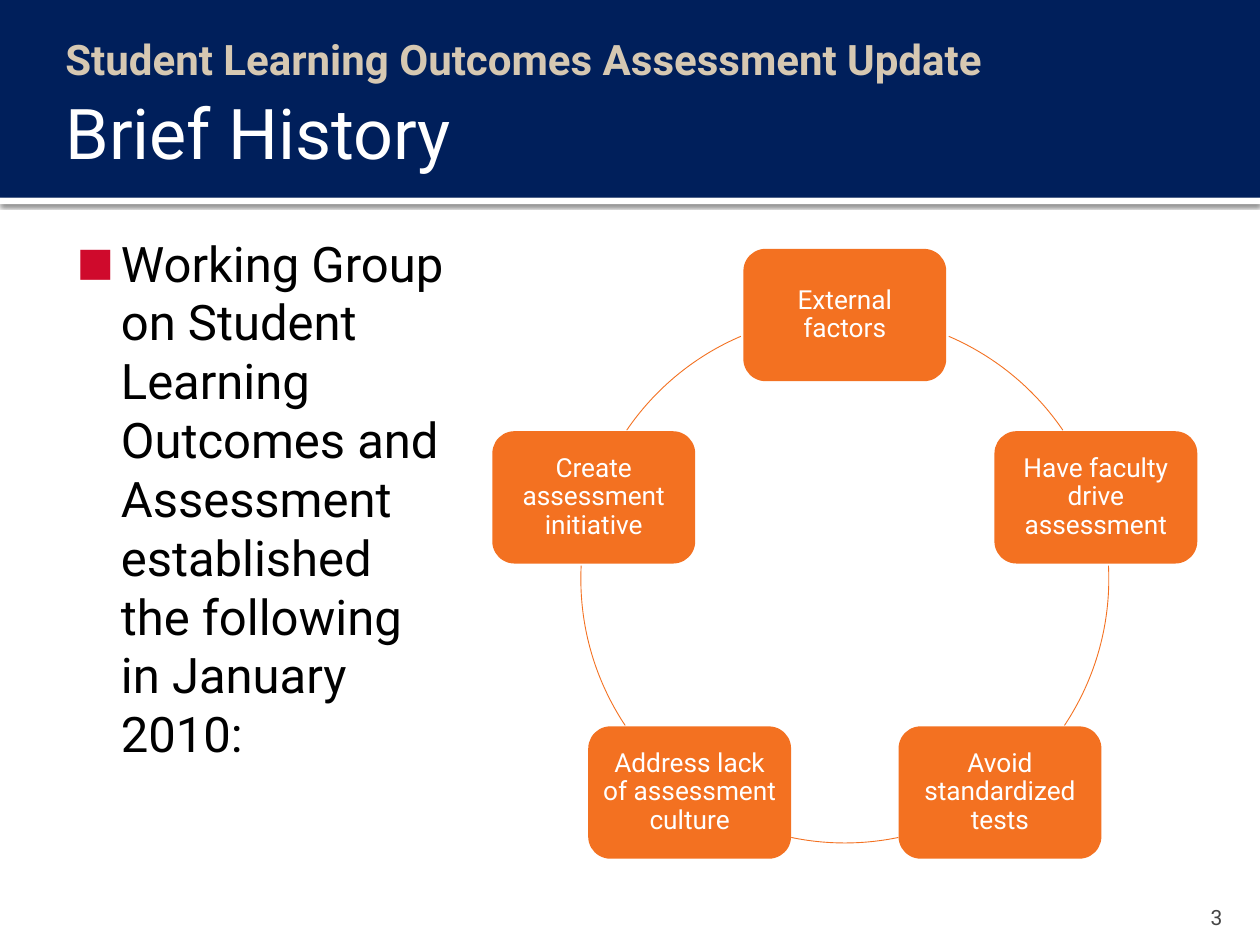
from collections import namedtuple
from math import cos, radians, sin

from lxml.etree import SubElement
from pptx import Presentation
from pptx.dml.color import RGBColor
from pptx.enum.shapes import MSO_SHAPE
from pptx.enum.text import MSO_ANCHOR, MSO_AUTO_SIZE, PP_ALIGN
from pptx.oxml.ns import qn
from pptx.util import Inches, Pt

WHITE = RGBColor(0xFF, 0xFF, 0xFF)
BLACK = RGBColor(0x00, 0x00, 0x00)
NAVY = RGBColor(0x00, 0x1F, 0x5B)
SAND = RGBColor(0xD6, 0xC8, 0xB2)
ORANGE = RGBColor(0xF3, 0x71, 0x21)
RED = RGBColor(0xCF, 0x0A, 0x2C)
GRAY = RGBColor(0x45, 0x45, 0x45)
FONT = "Roboto"

COLUMNS, ROWS = 100, 75
SLIDE_WIDTH, SLIDE_HEIGHT = Inches(10), Inches(7.5)
Box = namedtuple("Box", "left top width height")

STEPS = [
    "External factors",
    "Have faculty drive assessment",
    "Avoid standardized tests",
    "Address lack of assessment culture",
    "Create assessment initiative",
]
ARC_ANGLES = [(293.2, 325.7), (357.1, 33.7), (78.3, 101.7), (146.3, 182.9), (214.3, 246.8)]


def inside(box, left, top, width, height):
    return Box(box.left + left, box.top + top, width, height)


def to_lengths(box):
    column, row = SLIDE_WIDTH / COLUMNS, SLIDE_HEIGHT / ROWS
    return [int(value * unit) for value, unit in zip(box, (column, row, column, row))]


def add_plain_shape(slide, kind, box, fill=None):
    shape = slide.shapes.add_shape(kind, *to_lengths(box))
    shape.shadow.inherit = False
    if fill is not None:
        shape.fill.solid()
        shape.fill.fore_color.rgb = fill
        shape.line.fill.background()
    return shape


def write_text(shape, text, size, color, align=PP_ALIGN.LEFT, anchor=MSO_ANCHOR.TOP,
               margins=(0.06, 0.1, 0.1, 0.05), bold=False):
    frame = shape.text_frame
    frame.text = text
    frame.word_wrap = True
    frame.auto_size = MSO_AUTO_SIZE.NONE
    frame.vertical_anchor = anchor
    (frame.margin_left, frame.margin_top,
     frame.margin_right, frame.margin_bottom) = [Inches(margin) for margin in margins]
    paragraph = frame.paragraphs[0]
    paragraph.alignment = align
    font = paragraph.runs[0].font
    font.name, font.size, font.bold = FONT, Pt(size), bold
    font.color.rgb = color
    return paragraph


def add_text(slide, box, *args, **options):
    return write_text(slide.shapes.add_textbox(*to_lengths(box)), *args, **options)


def set_hanging_indent(paragraph, left, first_line):
    properties = paragraph._p.get_or_add_pPr()
    properties.set("marL", str(Inches(left)))
    properties.set("indent", str(Inches(first_line)))
    return properties


def add_bottom_shadow(shape):
    effects = shape.element.spPr.find(qn("a:effectLst"))
    shadow = SubElement(effects, qn("a:outerShdw"), blurRad=str(Pt(2.5)),
                        dist=str(Pt(0.8)), dir="5400000", rotWithShape="0")
    color = SubElement(shadow, qn("a:srgbClr"), val=str(BLACK))
    SubElement(color, qn("a:alpha"), val="60000")


def build_header(slide, box):
    strip = add_plain_shape(slide, MSO_SHAPE.RECTANGLE,
                            inside(box, 0, box.height, box.width, 0.5), WHITE)
    add_bottom_shadow(strip)
    add_plain_shape(slide, MSO_SHAPE.RECTANGLE, box, NAVY)
    subtitle = add_text(slide, inside(box, 3.3, 1.7, 93.4, 5),
                        "Student Learning Outcomes Assessment Update", 24, SAND, bold=True)
    set_hanging_indent(subtitle, 0.48, -0.35)
    title = slide.shapes.title
    title.left, title.top, title.width, title.height = to_lengths(
        inside(box, 4.2, 5.8, 91.7, 9.2))
    write_text(title, "Brief History", 40, WHITE, anchor=MSO_ANCHOR.MIDDLE,
               margins=(0.1, 0.05, 0.05, 0.05))
    title.element.getparent().append(title.element)


def build_statement(slide, box):
    paragraph = add_text(
        slide, box,
        "Working Group on Student Learning Outcomes and Assessment "
        "established the following in January 2010:", 28, BLACK)
    paragraph.space_before = Pt(12)
    properties = set_hanging_indent(paragraph, 0.48, -0.35)
    color = SubElement(properties, qn("a:buClr"))
    SubElement(color, qn("a:srgbClr"), val=str(RED))
    SubElement(properties, qn("a:buSzPct"), val="80000")
    SubElement(properties, qn("a:buFont"), typeface=FONT)
    SubElement(properties, qn("a:buChar"), char="■")


def build_cycle(slide, box, card_width=16.1, card_height=10.5):
    radius = box.width / 2
    for index, (step, angles) in enumerate(zip(STEPS, ARC_ANGLES)):
        direction = radians(360 / len(STEPS) * index - 90)
        card_box = inside(box, radius + radius * cos(direction) - card_width / 2,
                          radius + radius * sin(direction) - card_height / 2,
                          card_width, card_height)
        card = add_plain_shape(slide, MSO_SHAPE.ROUNDED_RECTANGLE, card_box, ORANGE)
        paragraph = write_text(card, step, 15, WHITE, PP_ALIGN.CENTER, MSO_ANCHOR.MIDDLE,
                               margins=(0.06,) * 4)
        paragraph.line_spacing = 0.9
        arc = add_plain_shape(slide, MSO_SHAPE.ARC, box)
        arc.fill.background()
        arc.line.color.rgb = ORANGE
        arc.line.width = Pt(0.5)
        for position, angle in enumerate(angles):
            arc.adjustments[position] = angle * 0.6


def build_page_number(slide, box):
    add_text(slide, box, "3", 12, GRAY, PP_ALIGN.RIGHT, MSO_ANCHOR.BOTTOM,
             margins=(0.1, 0.05, 0.1, 0))


def main():
    presentation = Presentation()
    presentation.slide_width, presentation.slide_height = SLIDE_WIDTH, SLIDE_HEIGHT
    slide = presentation.slides.add_slide(presentation.slide_layouts[5])
    build_header(slide, Box(0, 0, COLUMNS, 15.7))
    build_statement(slide, Box(4.2, 17.5, 32.5, 50.6))
    build_cycle(slide, Box(46.1, 25, 41.9, 41.9))
    build_page_number(slide, Box(90, 70.8, 8, 3))
    presentation.save("out.pptx")


if __name__ == "__main__":
    main()
